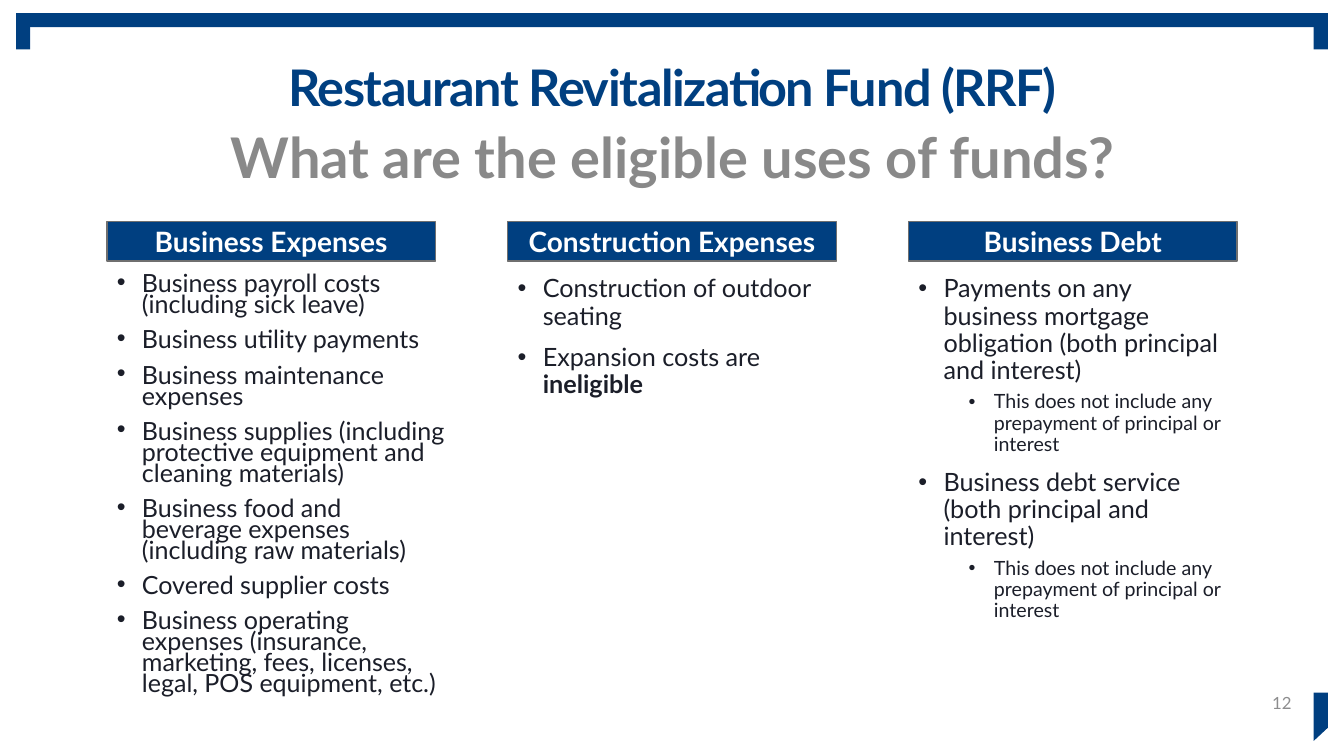
from pptx import Presentation
from pptx.dml.color import RGBColor
from pptx.enum.shapes import MSO_SHAPE as Shape
from pptx.enum.text import MSO_ANCHOR as Anchor, PP_ALIGN as Align
from pptx.oxml.ns import qn
from pptx.util import Inches, Pt
from lxml.etree import SubElement

NAVY = RGBColor(0x00, 0x3F, 0x80)
INK = RGBColor(0x1B, 0x1E, 0x29)
GRAY = RGBColor(0x89, 0x89, 0x89)
NUMBER_GRAY = RGBColor(0x8D, 0x8D, 0x8E)
BORDER = RGBColor(0x6F, 0x6F, 0x6F)
WHITE = RGBColor(0xFF, 0xFF, 0xFF)
FONT = "Lato"

COLUMN_LEFT, COLUMN_STEP, COLUMN_WIDTH = 1.06, 3.975, 3.26
PREPAYMENT = "This does not include any prepayment of principal or interest"
LEVELS = [
    {"indent": 0.25, "before": 10, "size": 18},
    {"indent": 0.75, "before": 5, "size": 14},
]
COLUMNS = [
    {
        "heading": "Business Expenses",
        "items": [
            (0, "Business payroll costs (including sick leave)"),
            (0, "Business utility payments"),
            (0, "Business maintenance expenses"),
            (0, "Business supplies (including protective equipment and cleaning materials)"),
            (0, "Business food and beverage expenses (including raw materials)"),
            (0, "Covered supplier costs"),
            (0, "Business operating expenses (insurance, marketing, fees, licenses, "
                "legal, POS equipment, etc.)"),
        ],
        "line_spacing": 0.7,
        "size": 17.9,
        "body_width": 3.45,
    },
    {
        "heading": "Construction Expenses",
        "items": [
            (0, "Construction of outdoor seating"),
            (0, "Expansion costs are ", "ineligible"),
        ],
    },
    {
        "heading": "Business Debt",
        "items": [
            (0, "Payments on any business mortgage obligation (both principal and interest)"),
            (1, PREPAYMENT),
            (0, "Business debt service (both principal and interest)"),
            (1, PREPAYMENT),
        ],
    },
]


def set_attributes(target, values):
    for name, value in values.items():
        setattr(target, name, value)


def add_run(paragraph, text, size, color, bold=False):
    run = paragraph.add_run()
    run.text = text
    set_attributes(run.font, {"name": FONT, "size": Pt(size), "bold": bold})
    run.font.color.rgb = color
    return run


def add_frame(slide, left, top, width, height, anchor=Anchor.TOP):
    shape = slide.shapes.add_textbox(
        Inches(left), Inches(top), Inches(width), Inches(height))
    set_attributes(shape.text_frame, {"word_wrap": True, "vertical_anchor": anchor})
    return shape.text_frame


def add_line(slide, box, text, size, color, bold=True, align=Align.CENTER,
             anchor=Anchor.TOP, line_spacing=0.9):
    paragraph = add_frame(slide, *box, anchor).paragraphs[0]
    set_attributes(paragraph, {"alignment": align, "line_spacing": line_spacing})
    return add_run(paragraph, text, size, color, bold)


def add_block(slide, left, top, width, height):
    shape = slide.shapes.add_shape(
        Shape.RECTANGLE, Inches(left), Inches(top), Inches(width), Inches(height))
    shape.shadow.inherit = False
    shape.fill.solid()
    shape.fill.fore_color.rgb = NAVY
    shape.line.fill.background()
    return shape


def add_page_frame(slide, left, top, width, height):
    thickness, drop, tab, cut = 0.14, 0.36, 0.48, 0.13
    right, bottom = left + width, top + height
    inner = right - thickness
    add_block(slide, inner, top, thickness, drop)
    add_block(slide, left, top, width, thickness)
    add_block(slide, left, top, thickness, drop)
    corner = [(right, bottom - tab), (right, bottom - cut), (inner, bottom)]
    builder = slide.shapes.build_freeform(
        Inches(inner), Inches(bottom - tab), scale=1.0)
    builder.add_line_segments([(Inches(x), Inches(y)) for x, y in corner], close=True)
    shape = builder.convert_to_shape()
    shape.shadow.inherit = False
    shape.fill.solid()
    shape.fill.fore_color.rgb = NAVY
    shape.line.fill.background()


def add_titles(slide, left, top, width):
    title = add_line(slide, (left, top, width, 0.65),
                     "Restaurant Revitalization Fund (RRF)", 36, NAVY)
    title.font._element.set("spc", "-100")
    add_line(slide, (left, top + 0.66, width, 0.76),
             "What are the eligible uses of funds?", 40, GRAY)


def add_heading(slide, left, top, width, text):
    shape = add_block(slide, left, top, width, 0.39)
    shape.line.color.rgb = BORDER
    shape.line.width = Pt(1)
    shape.text_frame.vertical_anchor = Anchor.MIDDLE
    paragraph = shape.text_frame.paragraphs[0]
    paragraph.alignment = Align.CENTER
    add_run(paragraph, text, 20, WHITE, True)


def add_bullet(paragraph, level, indent):
    properties = paragraph._p.get_or_add_pPr()
    properties.set("marL", str(Inches(indent)))
    properties.set("indent", str(Inches(-0.25)))
    SubElement(properties, qn("a:buFont")).set("typeface", "Arial")
    SubElement(properties, qn("a:buChar")).set("char", "•")
    paragraph.level = level


def add_column(slide, left, top, width, heading, items,
               line_spacing=0.9, size=None, body_width=None):
    add_heading(slide, left, top, width, heading)
    frame = add_frame(slide, left, top + 0.49, body_width or width, 4.6)
    for index, (level, text, *emphasis) in enumerate(items):
        paragraph = frame.add_paragraph() if index else frame.paragraphs[0]
        style = LEVELS[level]
        add_bullet(paragraph, level, style["indent"])
        set_attributes(paragraph, {
            "line_spacing": line_spacing,
            "space_before": Pt(style["before"] if index else 0),
        })
        text_size = size or style["size"]
        add_run(paragraph, text, text_size, INK)
        for words in emphasis:
            add_run(paragraph, words, text_size, INK, True)


def main():
    presentation = Presentation()
    presentation.slide_width = Inches(13.33)
    presentation.slide_height = Inches(7.5)
    slide = presentation.slides.add_slide(presentation.slide_layouts[6])
    add_page_frame(slide, 0.16, 0.13, 13.01, 7.22)
    add_titles(slide, 0.92, 0.58, 11.5)
    for index, column in enumerate(COLUMNS):
        add_column(slide, COLUMN_LEFT + index * COLUMN_STEP, 2.2, COLUMN_WIDTH, **column)
    add_line(slide, (9.91, 6.77, 3, 0.4), "12", 12, NUMBER_GRAY, bold=False,
             align=Align.RIGHT, anchor=Anchor.MIDDLE, line_spacing=1.0)
    presentation.save("out.pptx")


if __name__ == "__main__":
    main()
